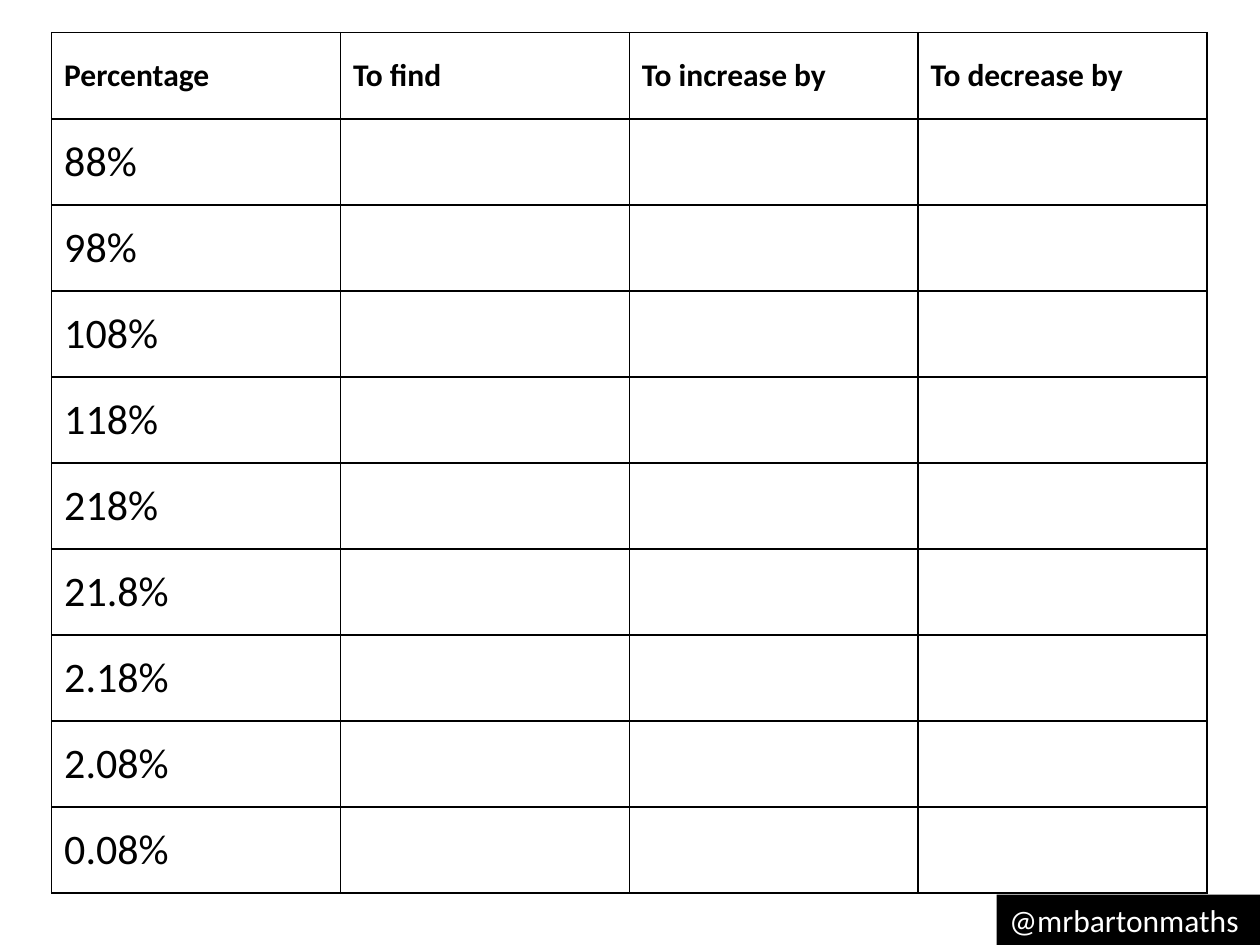
from dataclasses import dataclass

import lxml.etree
import pptx
import pptx.dml.color
import pptx.enum.shapes
import pptx.enum.text
import pptx.oxml.ns
import pptx.util

Inches = pptx.util.Inches
Pt = pptx.util.Pt
BLACK = "000000"
WHITE = "FFFFFF"


@dataclass(frozen=True)
class TextStyle:
    size: int
    color: str = BLACK
    bold: bool = False


HEADING = TextStyle(18, bold=True)
PERCENTAGE = TextStyle(24)
HANDLE = TextStyle(18, color=WHITE)

HEADINGS = ["Percentage", "To find", "To increase by", "To decrease by"]
PERCENTAGES = ["88%", "98%", "108%", "118%", "218%",
               "21.8%", "2.18%", "2.08%", "0.08%"]


def rgb(color: str) -> pptx.dml.color.RGBColor:
    return pptx.dml.color.RGBColor.from_string(color)


def write(frame, text: str, style: TextStyle) -> None:
    paragraph = frame.paragraphs[0]
    paragraph.text = text
    paragraph.alignment = pptx.enum.text.PP_ALIGN.LEFT
    font = paragraph.font
    font.name = "Calibri"
    font.size = Pt(style.size)
    font.bold = style.bold
    font.color.rgb = rgb(style.color)


def add_borders(cell, color: str, width: float) -> None:
    """Draw all four borders; they must precede the cell's fill in the XML."""
    qn = pptx.oxml.ns.qn
    properties = cell._tc.get_or_add_tcPr()
    for position, side in enumerate(("lnL", "lnR", "lnT", "lnB")):
        line = lxml.etree.Element(qn(f"a:{side}"), w=str(Pt(width)))
        fill = lxml.etree.SubElement(line, qn("a:solidFill"))
        lxml.etree.SubElement(fill, qn("a:srgbClr"), val=color)
        properties.insert(position, line)


def add_percentage_table(page) -> None:
    rows = [HEADINGS] + [[value, "", "", ""] for value in PERCENTAGES]
    table = page.shapes.add_table(
        len(rows), len(HEADINGS),
        Inches(0.41), Inches(0.26), Inches(9.17), Inches(6.83)).table
    table.horz_banding = False
    for row_number, values in enumerate(rows):
        style = PERCENTAGE if row_number else HEADING
        for column_number, value in enumerate(values):
            cell = table.cell(row_number, column_number)
            cell.vertical_anchor = pptx.enum.text.MSO_ANCHOR.MIDDLE
            cell.fill.background()
            add_borders(cell, BLACK, 1)
            if value:
                write(cell.text_frame, value, style)


def add_handle(page) -> None:
    box = page.shapes.add_shape(
        pptx.enum.shapes.MSO_SHAPE.RECTANGLE,
        Inches(7.91), Inches(7.1), Inches(2.09), Inches(0.4))
    box.shadow.inherit = False
    box.fill.solid()
    box.fill.fore_color.rgb = rgb(BLACK)
    box.line.fill.background()
    frame = box.text_frame
    frame.word_wrap = False
    frame.auto_size = pptx.enum.text.MSO_AUTO_SIZE.SHAPE_TO_FIT_TEXT
    frame.vertical_anchor = pptx.enum.text.MSO_ANCHOR.TOP
    write(frame, "@mrbartonmaths", HANDLE)


def main() -> None:
    deck = pptx.Presentation()
    deck.slide_width = Inches(10)
    deck.slide_height = Inches(7.5)
    page = deck.slides.add_slide(deck.slide_layouts[6])
    add_percentage_table(page)
    add_handle(page)
    deck.save("out.pptx")


if __name__ == "__main__":
    main()
